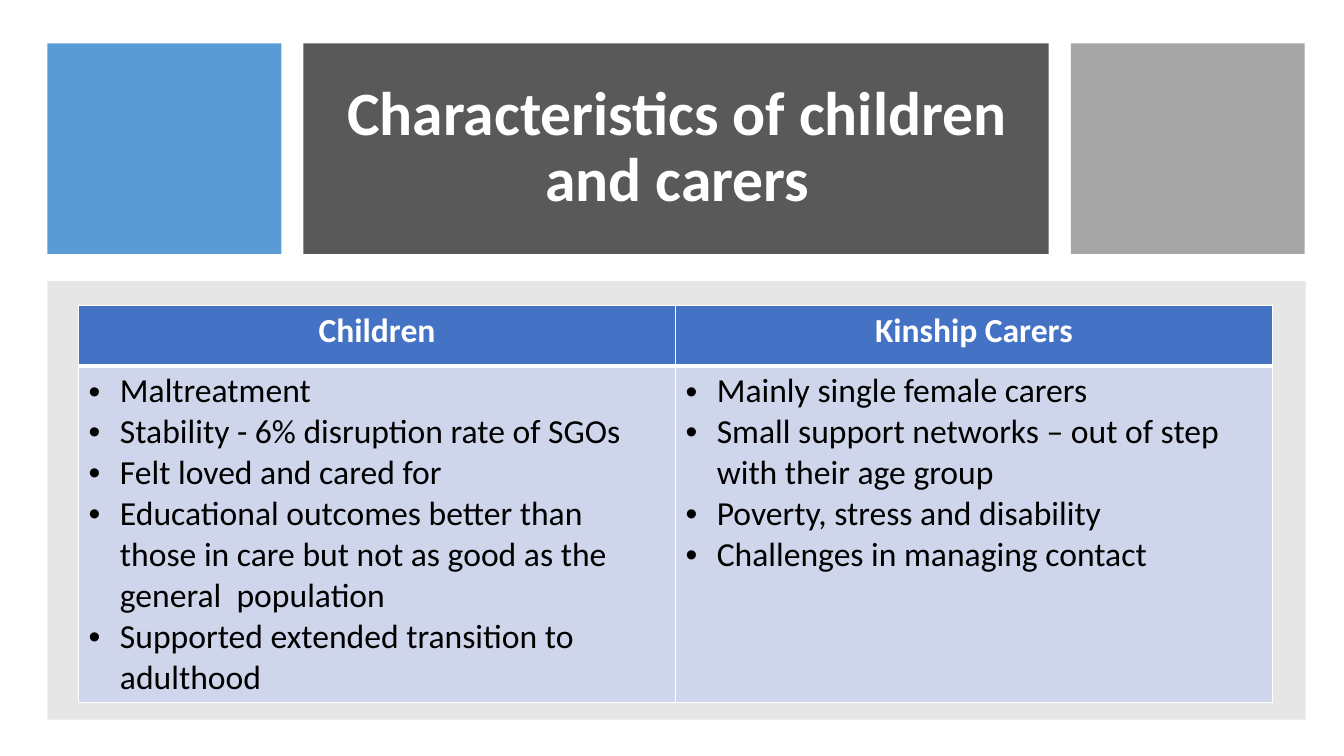
from lxml import etree
from pptx import Presentation
from pptx.dml.color import RGBColor
from pptx.enum import shapes, text
from pptx.oxml import ns
from pptx.util import Inches, Pt

COLORS = {
    "white": "FFFFFF",
    "black": "000000",
    "charcoal": "595959",
    "sky": "5B9BD5",
    "gray": "A5A5A5",
    "panel": "E7E6E6",
    "header": "4472C4",
    "body": "CFD5EA",
}


def write_text(frame, lines, size=24, color="black", bold=False, align=text.PP_ALIGN.LEFT,
               spacing=1.0, bullet=False):
    frame.word_wrap = True
    for index, line in enumerate(lines):
        paragraph = frame.paragraphs[0] if index == 0 else frame.add_paragraph()
        if bullet:
            properties = paragraph._p.get_or_add_pPr()
            properties.set("marL", str(Inches(0.31)))
            properties.set("indent", str(-Inches(0.31)))
            etree.SubElement(properties, ns.qn("a:buFont"), typeface="Arial")
            etree.SubElement(properties, ns.qn("a:buChar"), char="•")
        paragraph.alignment = align
        paragraph.line_spacing = spacing
        run = paragraph.add_run()
        run.text = line
        run.font.name = "Calibri"
        run.font.size = Pt(size)
        run.font.bold = bold
        run.font.color.rgb = RGBColor.from_string(COLORS[color])


def set_borders(cell, widths):
    """Draw white borders; widths in points, ordered left, right, top, bottom."""
    properties = cell._tc.get_or_add_tcPr()
    for index, (side, width) in enumerate(zip("LRTB", widths)):
        line = etree.Element(ns.qn(f"a:ln{side}"), w=str(Pt(width)))
        fill = etree.SubElement(line, ns.qn("a:solidFill"))
        etree.SubElement(fill, ns.qn("a:srgbClr"), val=COLORS["white"])
        properties.insert(index, line)


presentation = Presentation()
presentation.slide_width = Inches(13.33)
presentation.slide_height = Inches(7.5)
slide = presentation.slides.add_slide(presentation.slide_layouts[6])

# Background blocks
blocks = [
    (3.01, 0.43, 7.39, 2.09, "charcoal"),
    (0.47, 0.43, 2.32, 2.09, "sky"),
    (10.62, 0.43, 2.32, 2.09, "gray"),
    (0.47, 2.79, 12.48, 4.35, "panel"),
]
for left, top, width, height, color in blocks:
    block = slide.shapes.add_shape(shapes.MSO_SHAPE.RECTANGLE, Inches(left), Inches(top),
                                   Inches(width), Inches(height))
    block.shadow.inherit = False
    block.fill.solid()
    block.fill.fore_color.rgb = RGBColor.from_string(COLORS[color])
    block.line.fill.background()

# Title
title = slide.shapes.add_textbox(Inches(3.27), Inches(0.75), Inches(6.9), Inches(1.45))
title.text_frame.vertical_anchor = text.MSO_ANCHOR.MIDDLE
write_text(title.text_frame, ["Characteristics of children and carers"], size=44,
           color="white", bold=True, align=text.PP_ALIGN.CENTER, spacing=0.9)

# Comparison table
columns = {
    "Children": [
        "Maltreatment",
        "Stability - 6% disruption rate of SGOs",
        "Felt loved and cared for",
        "Educational outcomes better than those in care but not as good as the general  population",
        "Supported extended transition to adulthood",
    ],
    "Kinship Carers": [
        "Mainly single female carers",
        "Small support networks – out of step with their age group",
        "Poverty, stress and disability",
        "Challenges in managing contact",
    ],
}
table = slide.shapes.add_table(2, 2, Inches(0.78), Inches(3.03),
                               Inches(11.84), Inches(3.94)).table
table.rows[0].height = Inches(0.6)
table.rows[1].height = Inches(3.34)
for index, (heading, points) in enumerate(columns.items()):
    table.columns[index].width = Inches(5.92)
    header, body = table.cell(0, index), table.cell(1, index)
    write_text(header.text_frame, [heading], color="white", bold=True,
               align=text.PP_ALIGN.CENTER)
    write_text(body.text_frame, points, bullet=True)
    for cell, color, widths in [(header, "header", (1, 1, 1, 3)), (body, "body", (1, 1, 3, 1))]:
        cell.fill.solid()
        cell.fill.fore_color.rgb = RGBColor.from_string(COLORS[color])
        set_borders(cell, widths)

presentation.save("out.pptx")
